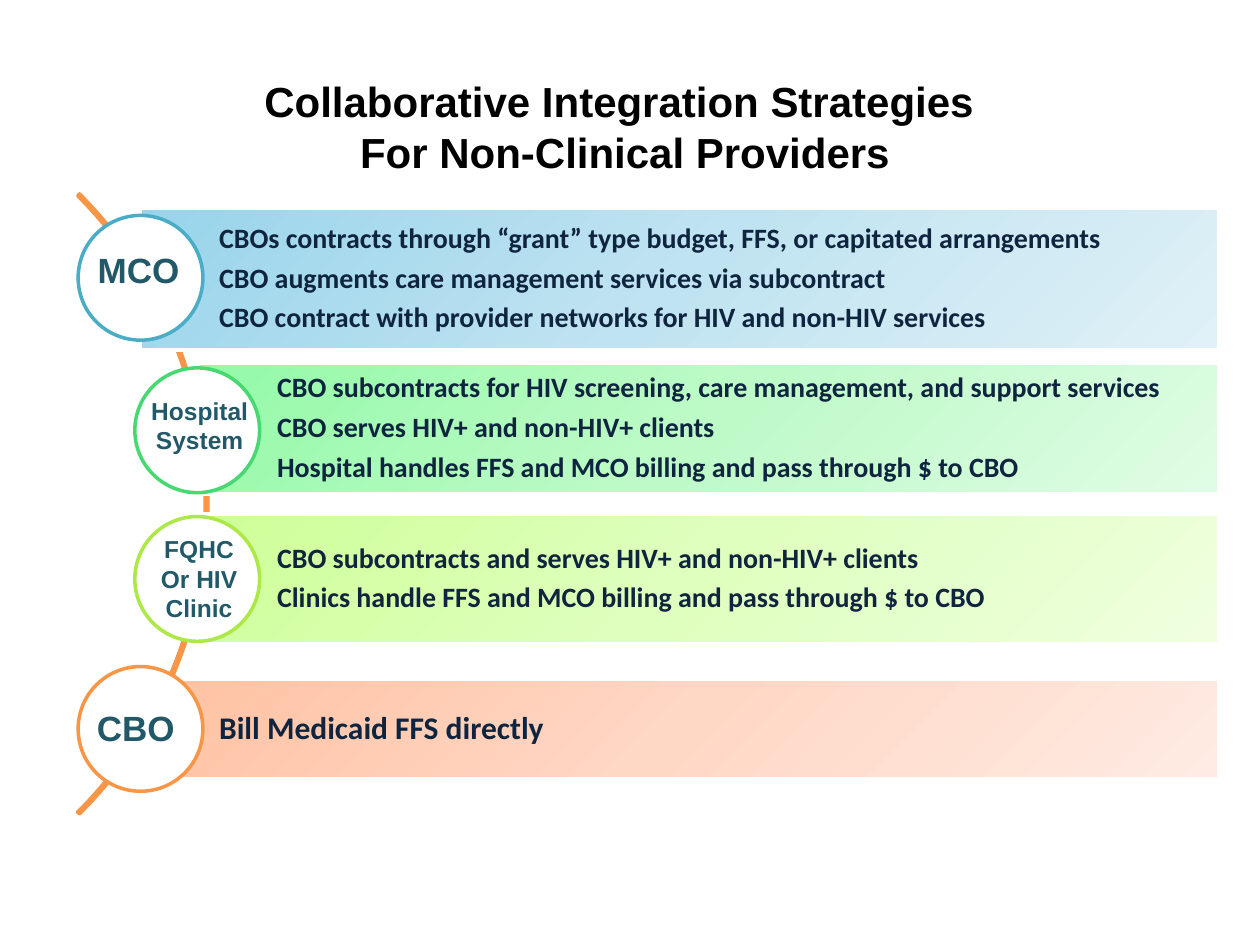
from copy import deepcopy

from pptx import Presentation
from pptx.dml.color import RGBColor
from pptx.enum.shapes import MSO_SHAPE
from pptx.enum.text import MSO_ANCHOR, PP_ALIGN
from pptx.oxml.ns import qn
from pptx.util import Inches, Pt

CIRCLE_SIZE = 0.99
BAND_RIGHT = 9.67
BAND_STOPS = (0, 0.5, 1)

STRATEGIES = [
    {
        "band": (1.11, 1.65, 1.13),
        "gradient": ("98D4EB", "C0E3F1", "E0F1F7"),
        "lines": [
            "CBOs contracts through “grant” type budget, FFS, or capitated arrangements",
            "CBO augments care management services via subcontract",
            "CBO contract with provider networks for HIV and non-HIV services",
        ],
        "size": 16,
        "circle": (0.62, 1.71, "4BACC6"),
        "label": ("MCO", (0.67, 1.92, 0.86, 0.44), 20, PP_ALIGN.CENTER),
    },
    {
        "band": (1.57, 2.88, 1.04),
        "gradient": ("93FAA7", "BEFAC8", "DFFCE4"),
        "lines": [
            "CBO subcontracts for HIV screening, care management, and support services",
            "CBO serves HIV+ and non-HIV+ clients",
            "Hospital handles FFS and MCO billing and pass through $ to CBO",
        ],
        "size": 16,
        "circle": (1.07, 2.92, "47D872"),
        "label": ("Hospital System", (1, 3.09, 1.17, 0.57), 14, PP_ALIGN.CENTER),
    },
    {
        "band": (1.57, 4.08, 1.03),
        "gradient": ("CEFF98", "DFFFBF", "EFFFDF"),
        "lines": [
            "CBO subcontracts and serves HIV+ and non-HIV+ clients",
            "Clinics handle FFS and MCO billing and pass through $ to CBO",
        ],
        "size": 16,
        "circle": (1.07, 4.1, "ACE946"),
        "label": ("FQHC Or HIV Clinic", (1.08, 4.19, 1, 0.81), 14, PP_ALIGN.CENTER),
    },
    {
        "band": (1.11, 5.39, 0.79),
        "gradient": ("FFC1A1", "FFD7C5", "FFEBE3"),
        "lines": ["Bill Medicaid FFS directly"],
        "size": 18,
        "circle": (0.62, 5.29, "F79646"),
        "label": ("CBO", (0.67, 5.56, 0.91, 0.44), 20, PP_ALIGN.LEFT),
    },
]


def color(value):
    return RGBColor.from_string(value)


def write_text(shape, lines, *, size, font, text_color, align=PP_ALIGN.LEFT,
               anchor=MSO_ANCHOR.TOP, line_spacing=None, space_after=None):
    frame = shape.text_frame
    frame.word_wrap = True
    frame.vertical_anchor = anchor
    frame.text = "\n".join(lines)
    for paragraph in frame.paragraphs:
        paragraph.alignment = align
        paragraph.line_spacing = line_spacing
        paragraph.space_after = space_after
        for run in paragraph.runs:
            run.font.name = font
            run.font.size = Pt(size)
            run.font.bold = True
            run.font.color.rgb = color(text_color)


def add_outlined_shape(slide, kind, left, top, width, height, line_color):
    shape = slide.shapes.add_shape(
        kind, Inches(left), Inches(top), Inches(width), Inches(height))
    shape.shadow.inherit = False
    shape.line.color.rgb = color(line_color)
    shape.line.width = Pt(2)
    return shape


def add_title(slide):
    title = slide.shapes.title
    title.left, title.top = Inches(0.5), Inches(0.5)
    title.width, title.height = Inches(8.92), Inches(1)
    write_text(title, ["Collaborative Integration Strategies \vFor Non-Clinical Providers"],
               size=24, font="Arial", text_color="000000",
               align=PP_ALIGN.CENTER, anchor=MSO_ANCHOR.MIDDLE)


def add_arc(slide):
    arc = add_outlined_shape(slide, MSO_SHAPE.BLOCK_ARC, -5.31, 0.52, 6.96, 6.96, "F79646")
    arc.fill.background()
    for index, value in enumerate((189, 27, 0.003)):
        arc.adjustments[index] = value


def fill_gradient(shape, colors):
    shape.fill.gradient()
    shape.fill.gradient_angle = 315
    stop_list = shape.fill._xPr.find(".//" + qn("a:gsLst"))
    stop_list.insert(1, deepcopy(stop_list[0]))
    for stop, position, value in zip(shape.fill.gradient_stops, BAND_STOPS, colors):
        stop.position = position
        stop.color.rgb = color(value)


def add_band(slide, strategy):
    left, top, height = strategy["band"]
    band = add_outlined_shape(slide, MSO_SHAPE.RECTANGLE, left, top,
                              BAND_RIGHT - left, height, "FFFFFF")
    fill_gradient(band, strategy["gradient"])
    frame = band.text_frame
    frame.margin_left = Inches(0.63)
    frame.margin_top = frame.margin_right = frame.margin_bottom = Inches(0.04)
    write_text(band, strategy["lines"], size=strategy["size"], font="Calibri",
               text_color="0F243E", anchor=MSO_ANCHOR.MIDDLE,
               line_spacing=0.9, space_after=Pt(5.5))


def add_circle(slide, left, top, line_color):
    circle = add_outlined_shape(slide, MSO_SHAPE.OVAL, left, top,
                                CIRCLE_SIZE, CIRCLE_SIZE, line_color)
    circle.fill.solid()
    circle.fill.fore_color.rgb = color("FFFFFF")


def add_label(slide, text, bounds, size, align):
    label = slide.shapes.add_textbox(*map(Inches, bounds))
    write_text(label, [text], size=size, font="Arial", text_color="215968", align=align)


def main():
    presentation = Presentation()
    presentation.slide_width = Inches(10)
    presentation.slide_height = Inches(7.5)
    slide = presentation.slides.add_slide(presentation.slide_layouts[5])
    add_title(slide)
    add_arc(slide)
    for strategy in STRATEGIES:
        add_band(slide, strategy)
        add_circle(slide, *strategy["circle"])
    for strategy in STRATEGIES:
        add_label(slide, *strategy["label"])
    presentation.save("out.pptx")


if __name__ == "__main__":
    main()
